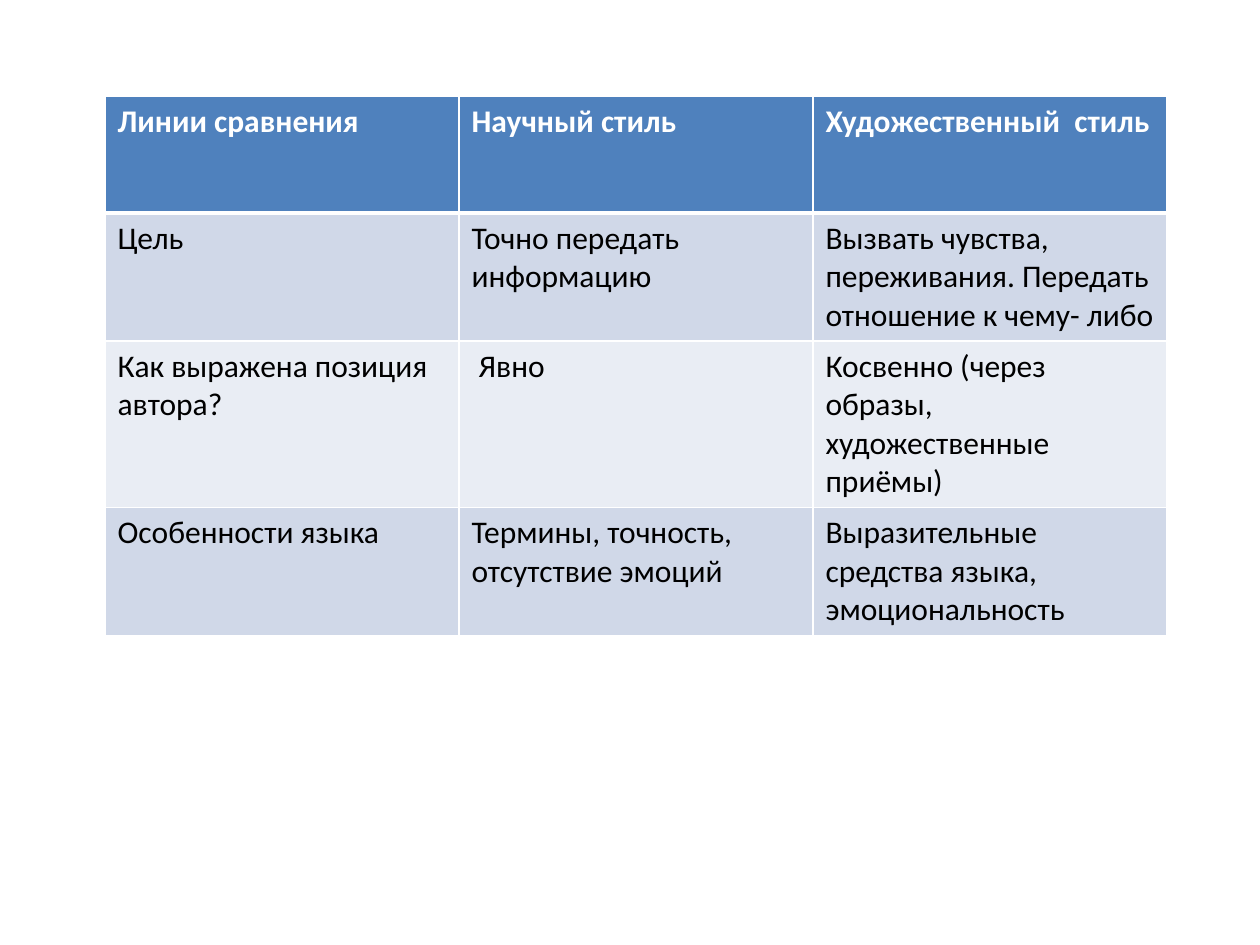
from lxml import etree
from pptx import Presentation
from pptx.dml.color import RGBColor
from pptx.oxml.ns import qn
from pptx.util import Emu, Pt

SCALE = 914400 / 126
BLANK_LAYOUT = 6
HEADER_FILL, BAND_FILLS = "4F81BD", ("D0D8E8", "E9EDF4")
WHITE, BLACK = "FFFFFF", "000000"

ROWS = [
    ("Линии сравнения", "Научный стиль", "Художественный  стиль"),
    ("Цель", "Точно передать информацию",
     "Вызвать чувства, переживания. Передать отношение к чему- либо"),
    ("Как выражена позиция автора?", " Явно",
     "Косвенно (через образы, художественные приёмы)"),
    ("Особенности языка", "Термины, точность, отсутствие эмоций",
     "Выразительные средства языка, эмоциональность"),
]


def px(value):
    return Emu(round(value * SCALE))


def rgb(value):
    return RGBColor.from_string(value)


class Deck:
    font = {"name": "Calibri", "size": Pt(18)}

    def __init__(self, width, height):
        self.prs = Presentation()
        self.prs.slide_width, self.prs.slide_height = px(width), px(height)
        self.s = self.prs.slides.add_slide(self.prs.slide_layouts[BLANK_LAYOUT])

    def border(self, cell, side, width, color=WHITE):
        tc_pr = cell._tc.get_or_add_tcPr()
        ln = etree.SubElement(tc_pr, qn(f"a:ln{side}"), w=str(Pt(width)))
        fill = etree.SubElement(ln, qn("a:solidFill"))
        etree.SubElement(fill, qn("a:srgbClr"), val=color)

    def cell(self, cell, text, fill, color, bold, widths):
        for side, width in widths.items():
            self.border(cell, side, width)
        cell.fill.solid()
        cell.fill.fore_color.rgb = rgb(fill)
        r = cell.text_frame.paragraphs[0].add_run()
        r.text = text
        for name, value in {**self.font, "bold": bold}.items():
            setattr(r.font, name, value)
        r.font.color.rgb = rgb(color)

    def table(self, left, top, col_width, row_height, rows):
        n_rows, n_cols = len(rows), len(rows[0])
        frame = self.s.shapes.add_table(
            n_rows, n_cols, px(left), px(top),
            px(col_width * n_cols), px(row_height * n_rows))
        table = frame.table
        for col in table.columns:
            col.width = px(col_width)
        for i, texts in enumerate(rows):
            table.rows[i].height = px(row_height)
            header = i == 0
            fill = HEADER_FILL if header else BAND_FILLS[(i - 1) % 2]
            color = WHITE if header else BLACK
            widths = {"L": 1, "R": 1, "T": 3 if i == 1 else 1, "B": 3 if header else 1}
            for j, text in enumerate(texts):
                self.cell(table.cell(i, j), text, fill, color, header, widths)


def main():
    deck = Deck(1260, 945)
    deck.table(105, 96, 354, 117, ROWS)
    deck.prs.save("out.pptx")


if __name__ == "__main__":
    main()
